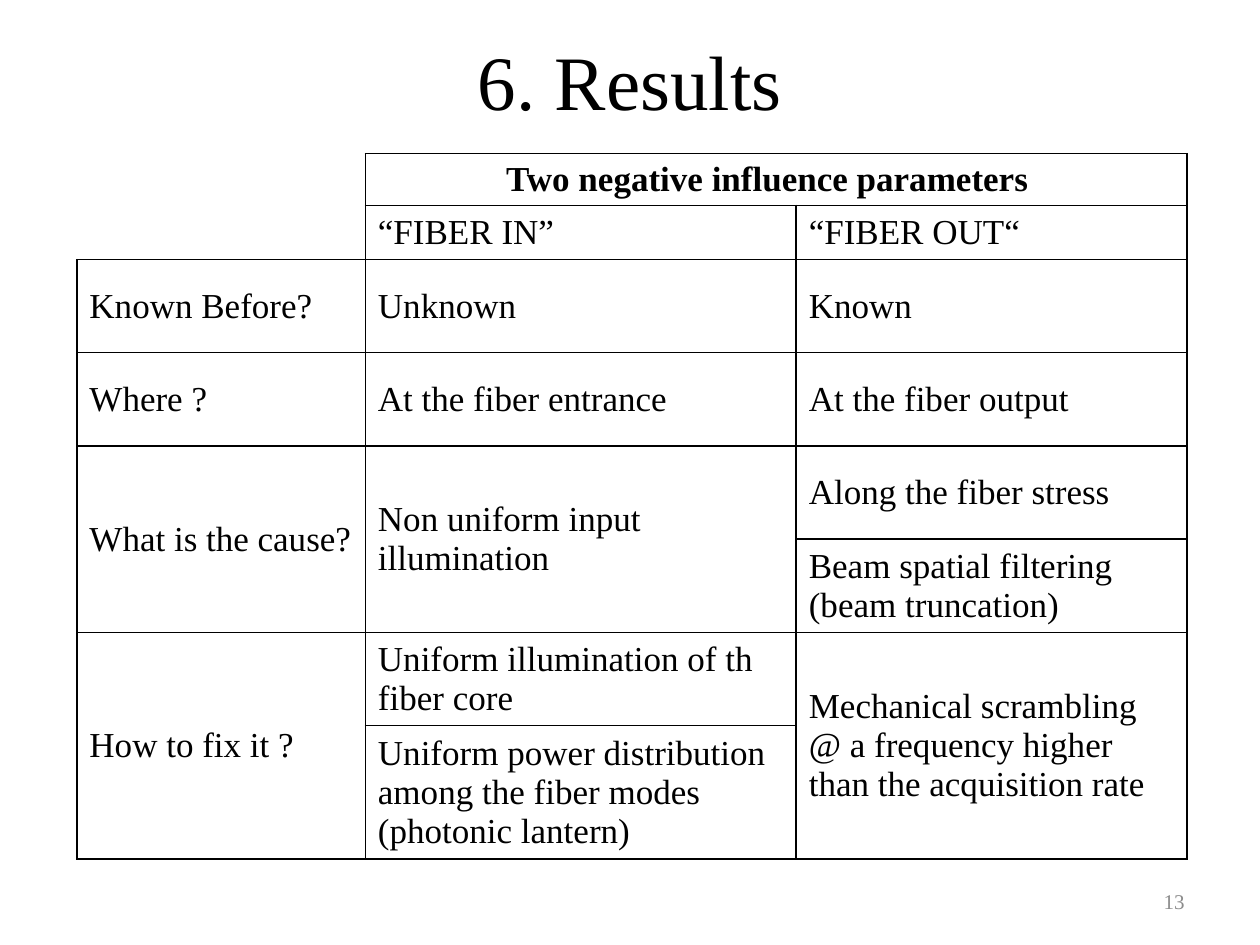
import lxml.etree
import pptx
import pptx.dml.color
import pptx.enum.text
import pptx.oxml.ns
import pptx.util
from pptx.util import Inches

BLACK = pptx.dml.color.RGBColor(0x00, 0x00, 0x00)
GRAY = pptx.dml.color.RGBColor(0x8C, 0x8C, 0x8C)
FONT = "Times New Roman"
ALIGN = pptx.enum.text.PP_ALIGN
MIDDLE = pptx.enum.text.MSO_ANCHOR.MIDDLE

COLUMN_WIDTHS = [2.29, 3.42, 3.1]
ROW_HEIGHTS = [0.41, 0.43] + [0.74] * 5 + [1.06]
HEADER_ROWS = 2

# None marks a cell without text: the open corner or part of a merged cell
ROWS = [
    [None, "Two negative influence parameters", None],
    [None, "“FIBER IN”", "“FIBER OUT“"],
    ["Known Before?", "Unknown", "Known"],
    ["Where ?", "At the fiber entrance", "At the fiber output"],
    ["What is the cause?", "Non uniform input illumination", "Along the fiber stress"],
    [None, None, "Beam spatial filtering (beam truncation)"],
    ["How to fix it ?", "Uniform illumination of th fiber core",
     "Mechanical scrambling @ a frequency higher than the acquisition rate"],
    [None, "Uniform power distribution among the fiber modes (photonic lantern)", None],
]
# First and last cell of each merged range, as (row, column)
MERGES = [((0, 1), (0, 2)), ((4, 0), (5, 0)), ((4, 1), (5, 1)),
          ((6, 0), (7, 0)), ((6, 2), (7, 2))]


def format_paragraph(paragraph, size, color, alignment, bold=False):
    paragraph.alignment = alignment
    paragraph.font.name = FONT
    paragraph.font.size = pptx.util.Pt(size)
    paragraph.font.bold = bold
    paragraph.font.color.rgb = color


def set_borders(cell, drawn_sides):
    """Draw thin black lines on the given sides and clear the others."""
    properties = cell._tc.get_or_add_tcPr()
    for side in "LRTB":
        line = lxml.etree.SubElement(properties, pptx.oxml.ns.qn(f"a:ln{side}"))
        line.set("w", str(pptx.util.Pt(1)))
        if side in drawn_sides:
            fill = lxml.etree.SubElement(line, pptx.oxml.ns.qn("a:solidFill"))
            color = lxml.etree.SubElement(fill, pptx.oxml.ns.qn("a:srgbClr"))
            color.set("val", str(BLACK))
        else:
            lxml.etree.SubElement(line, pptx.oxml.ns.qn("a:noFill"))


def corner_sides(row):
    """The open corner only borders the cells to its right and below."""
    return "RB" if row == HEADER_ROWS - 1 else "R"


def add_title(slide, text):
    title = slide.shapes.title
    title.left, title.top = Inches(0.5), Inches(0.01)
    title.width, title.height = Inches(9), Inches(1.25)
    title.text_frame.text = text
    title.text_frame.vertical_anchor = MIDDLE
    format_paragraph(title.text_frame.paragraphs[0], 44, BLACK, ALIGN.CENTER)


def add_results_table(slide):
    table = slide.shapes.add_table(
        len(ROWS), len(COLUMN_WIDTHS), Inches(0.61), Inches(1.22),
        Inches(sum(COLUMN_WIDTHS)), Inches(sum(ROW_HEIGHTS))).table
    table.first_row = False
    table.horz_banding = False
    for column, width in zip(table.columns, COLUMN_WIDTHS):
        column.width = Inches(width)
    for row, height in zip(table.rows, ROW_HEIGHTS):
        row.height = Inches(height)

    for row, texts in enumerate(ROWS):
        for column, text in enumerate(texts):
            cell = table.cell(row, column)
            in_corner = row < HEADER_ROWS and column == 0
            set_borders(cell, corner_sides(row) if in_corner else "LRTB")
            cell.fill.background()
            cell.vertical_anchor = MIDDLE
            if text:
                cell.text = text
                is_heading = row == 0
                format_paragraph(cell.text_frame.paragraphs[0], 20, BLACK,
                                 ALIGN.CENTER if is_heading else ALIGN.LEFT, is_heading)

    for first, last in MERGES:
        table.cell(*first).merge(table.cell(*last))
    # The heading sits slightly left of centre
    table.cell(0, 1).margin_right = Inches(0.24)


def add_page_number(slide, text):
    box = slide.shapes.add_textbox(Inches(7.17), Inches(6.95), Inches(2.33), Inches(0.4))
    box.text_frame.word_wrap = True
    box.text_frame.vertical_anchor = MIDDLE
    box.text_frame.text = text
    format_paragraph(box.text_frame.paragraphs[0], 12, GRAY, ALIGN.RIGHT)


def main():
    presentation = pptx.Presentation()
    presentation.slide_width, presentation.slide_height = Inches(10), Inches(7.5)
    slide = presentation.slides.add_slide(presentation.slide_layouts[5])
    add_title(slide, "6. Results")
    add_results_table(slide)
    add_page_number(slide, "13")
    presentation.save("out.pptx")


if __name__ == "__main__":
    main()
